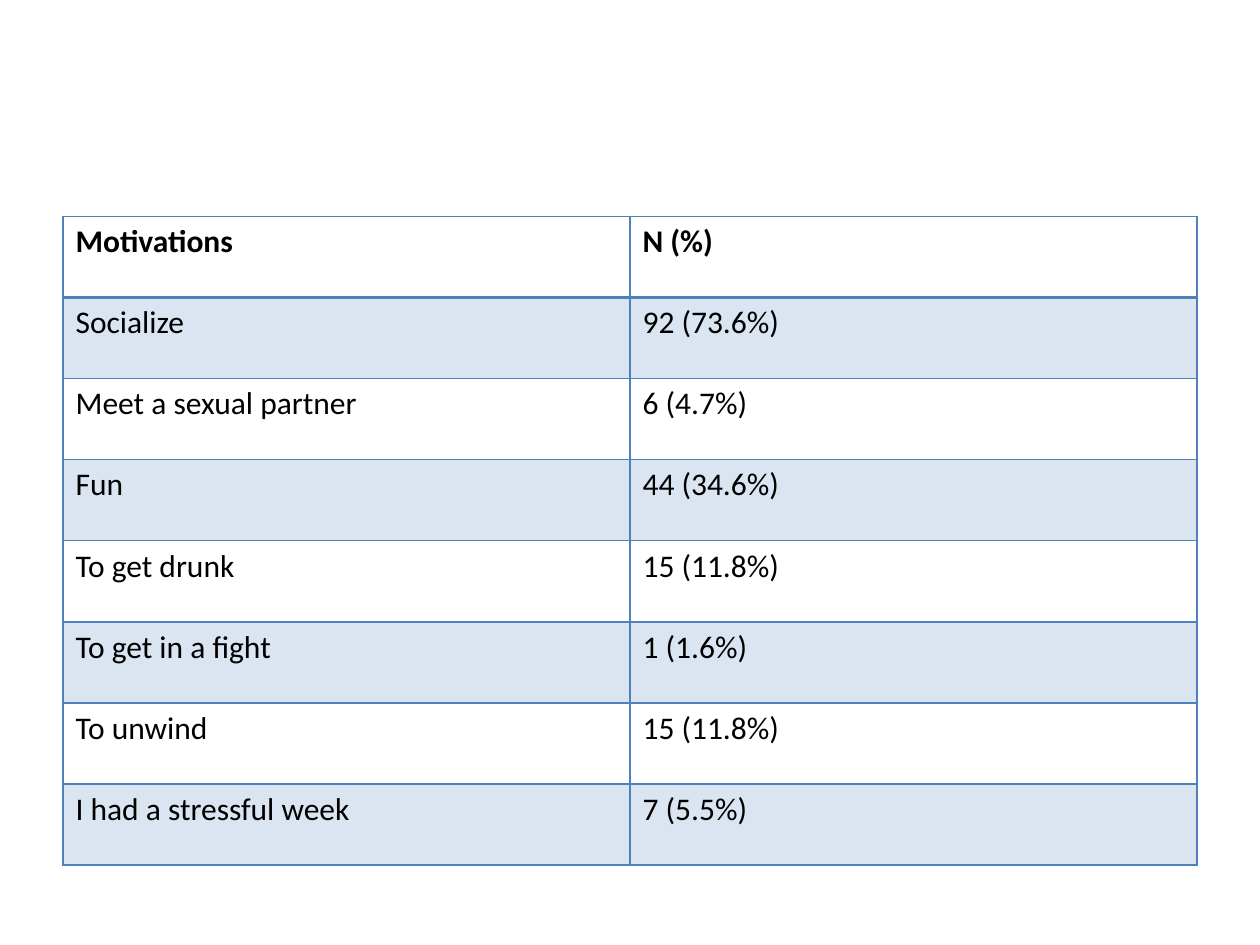
from dataclasses import dataclass

from lxml.etree import SubElement
from pptx import Presentation
from pptx.dml.color import RGBColor
from pptx.oxml.ns import qn
from pptx.util import Cm, Pt


@dataclass(frozen=True)
class Theme:
    font: str = "Calibri"
    text: str = "000000"
    accent: str = "4F81BD"
    band_opacity: int = 20
    body_size: int = 18
    thin_line: int = 1
    thick_line: int = 2


def write_text(frame, text, *, font, size, color, bold=False):
    span = frame.paragraphs[0].add_run()
    span.text = text
    span.font.name = font
    span.font.size = Pt(size)
    span.font.bold = bold
    span.font.color.rgb = RGBColor.from_string(color)


class SlideBuilder:
    def __init__(self, page, theme):
        self.page = page
        self.theme = theme

    def border(self, cell, side, width):
        properties = cell._tc.get_or_add_tcPr()
        line = SubElement(properties, qn(f"a:ln{side}"), w=str(Pt(width)))
        fill = SubElement(line, qn("a:solidFill"))
        SubElement(fill, qn("a:srgbClr"), val=self.theme.accent)

    def tint(self, cell):
        cell.fill.solid()
        cell.fill.fore_color.rgb = RGBColor.from_string(self.theme.accent)
        color = cell._tc.tcPr.find(f"{qn('a:solidFill')}/{qn('a:srgbClr')}")
        SubElement(color, qn("a:alpha"), val=str(self.theme.band_opacity * 1000))

    def table(self, rows, left, top, width, height):
        theme = self.theme
        table = self.page.shapes.add_table(
            len(rows), len(rows[0]), left, top, width, height
        ).table
        table.horz_banding = False
        table.first_row = False

        for row_index, values in enumerate(rows):
            for column_index, value in enumerate(values):
                cell = table.cell(row_index, column_index)
                write_text(cell.text_frame, value, font=theme.font,
                           size=theme.body_size, color=theme.text,
                           bold=row_index == 0)

                # Grid lines, with a thicker rule under the header
                for side in "LRTB":
                    under_header = (row_index, side) in ((0, "B"), (1, "T"))
                    self.border(cell, side, theme.thick_line if under_header
                                else theme.thin_line)

                # Alternate row bands
                if row_index % 2:
                    self.tint(cell)
                else:
                    cell.fill.background()


MOTIVATIONS = [
    ("Motivations", "N (%)"),
    ("Socialize", "92 (73.6%)"),
    ("Meet a sexual partner", "6 (4.7%)"),
    ("Fun", "44 (34.6%)"),
    ("To get drunk", "15 (11.8%)"),
    ("To get in a fight", "1 (1.6%)"),
    ("To unwind", "15 (11.8%)"),
    ("I had a stressful week", "7 (5.5%)"),
]


def main():
    deck = Presentation()
    deck.slide_width = Cm(25.4)
    deck.slide_height = Cm(19.05)
    page = deck.slides.add_slide(deck.slide_layouts[6])

    # Motivations table
    builder = SlideBuilder(page, Theme())
    builder.table(MOTIVATIONS, Cm(1.27), Cm(4.36), Cm(22.86), Cm(13.08))

    deck.save("out.pptx")


if __name__ == "__main__":
    main()
